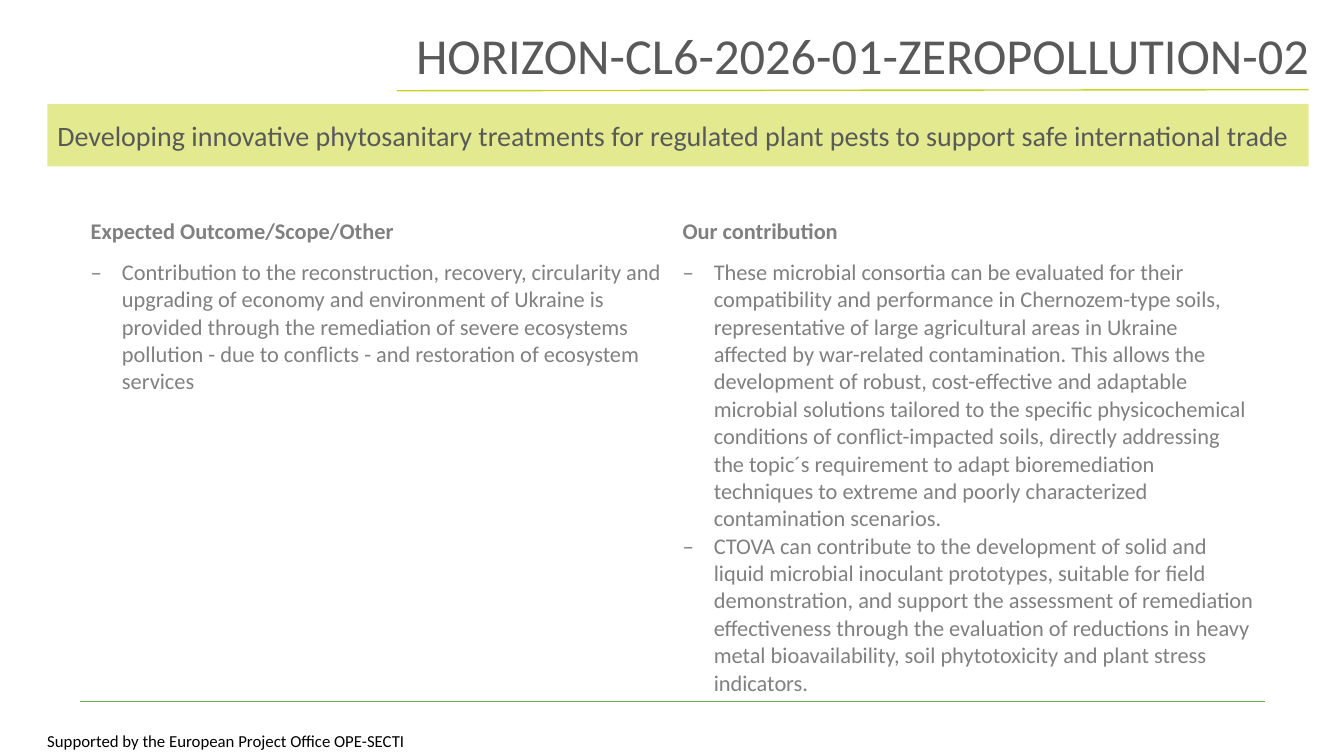
from dataclasses import dataclass

from lxml import etree
from pptx import Presentation
from pptx import util as u
from pptx.dml import color
from pptx.enum import shapes, text
from pptx.oxml import ns

COLORS = {
    "lime": "C7D41E",
    "green": "70AD47",
    "title": "595959",
    "body": "808080",
    "footer": "000000",
    "white": "FFFFFF",
}
FONT = "Calibri"
INDENT = u.Inches(0.31)
ROW_HEIGHTS = (0.41, 4.44)


@dataclass(frozen=True)
class Style:
    size: int
    color: str
    bold: bool = False


@dataclass(frozen=True)
class Column:
    heading: str
    points: tuple[str, ...]


TITLE = Style(36, "title")
TOPIC = Style(20, "title")
HEADING = Style(16, "body", True)
POINT = Style(16, "body")
FOOTER = Style(12, "footer")

COLUMNS = (
    Column(
        "Expected Outcome/Scope/Other",
        (
            "Contribution to the reconstruction, recovery, circularity and upgrading of "
            "economy and environment of Ukraine is provided through the remediation of "
            "severe ecosystems pollution - due to conflicts - and restoration of "
            "ecosystem services",
        ),
    ),
    Column(
        "Our contribution",
        (
            "These microbial consortia can be evaluated for their compatibility and "
            "performance in Chernozem-type soils, representative of large agricultural "
            "areas in Ukraine affected by war-related contamination. This allows the "
            "development of robust, cost-effective and adaptable microbial solutions "
            "tailored to the specific physicochemical conditions of conflict-impacted "
            "soils, directly addressing the topic´s requirement to adapt bioremediation "
            "techniques to extreme and poorly characterized contamination scenarios.",
            "CTOVA can contribute to the development of solid and liquid microbial "
            "inoculant prototypes, suitable for field demonstration, and support the "
            "assessment of remediation effectiveness through the evaluation of "
            "reductions in heavy metal bioavailability, soil phytotoxicity and plant "
            "stress indicators.",
        ),
    ),
)


def rgb(name: str) -> color.RGBColor:
    return color.RGBColor.from_string(COLORS[name])


def apply(obj, values: dict) -> None:
    for name, value in values.items():
        setattr(obj, name, value)


def box(left: float, top: float, width: float, height: float) -> dict:
    sides = {"left": left, "top": top, "width": width, "height": height}
    return {side: u.Inches(value) for side, value in sides.items()}


def write(p, words: str, style: Style, **layout) -> None:
    apply(p, layout)
    r = p.add_run()
    r.text = words
    apply(r.font, {"name": FONT, "size": u.Pt(style.size), "bold": style.bold})
    r.font.color.rgb = rgb(style.color)


def add_bullet(p) -> None:
    pPr = p._p.get_or_add_pPr()
    apply_indent = {"marL": INDENT, "indent": -INDENT}
    for name, value in apply_indent.items():
        pPr.set(name, str(int(value)))
    etree.SubElement(pPr, ns.qn("a:buFont"), typeface=FONT)
    etree.SubElement(pPr, ns.qn("a:buChar"), char="‒")


def fill_tint(fill, parent, name: str, opacity: int) -> None:
    fill.solid()
    fill.fore_color.rgb = rgb(name)
    clr = parent.find(ns.qn("a:solidFill")).find(ns.qn("a:srgbClr"))
    etree.SubElement(clr, ns.qn("a:alpha"), val=str(opacity * 1000))


def add_bottom_border(cell, name: str, width: float) -> None:
    tcPr = cell._tc.get_or_add_tcPr()
    border = etree.Element(ns.qn("a:lnB"), w=str(int(u.Pt(width))))
    solid = etree.SubElement(border, ns.qn("a:solidFill"))
    etree.SubElement(solid, ns.qn("a:srgbClr"), val=COLORS[name])
    tcPr.insert(0, border)


def add_title(s) -> None:
    sp = s.shapes.title
    apply(sp, box(3.84, 0.18, 9.25, 0.72))
    tf = sp.text_frame
    apply(tf, {
        "auto_size": text.MSO_AUTO_SIZE.NONE,
        "vertical_anchor": text.MSO_ANCHOR.BOTTOM,
        "word_wrap": True,
    })
    write(tf.paragraphs[0], "HORIZON-CL6-2026-01-ZEROPOLLUTION-02", TITLE,
          alignment=text.PP_ALIGN.RIGHT, line_spacing=0.9)


def add_title_rule(s) -> None:
    line = s.shapes.add_connector(
        shapes.MSO_CONNECTOR.STRAIGHT,
        u.Inches(3.94), u.Inches(0.9), u.Inches(12.98), u.Inches(0.89),
    )
    line.line.color.rgb = rgb("lime")
    line.line.width = u.Pt(1)
    etree.SubElement(line._element.spPr, ns.qn("a:effectLst"))


def add_topic(s) -> None:
    sp = s.shapes.add_shape(shapes.MSO_SHAPE.RECTANGLE, **box(0.47, 1.03, 12.51, 0.62))
    sp.shadow.inherit = False
    fill_tint(sp.fill, sp._element.spPr, "lime", 50)
    sp.line.fill.background()
    tf = sp.text_frame
    apply(tf, {"word_wrap": True, "vertical_anchor": text.MSO_ANCHOR.MIDDLE})
    write(tf.paragraphs[0],
          "Developing innovative phytosanitary treatments for regulated plant pests "
          "to support safe international trade",
          TOPIC, alignment=text.PP_ALIGN.LEFT)


def add_contributions(s) -> None:
    frame = s.shapes.add_table(
        len(ROW_HEIGHTS), len(COLUMNS), **box(0.8, 2.11, 11.74, sum(ROW_HEIGHTS))
    )
    table = frame.table
    apply(table, {"first_row": False, "horz_banding": False})
    for row, height in zip(table.rows, ROW_HEIGHTS):
        row.height = u.Inches(height)
    for i, column in enumerate(COLUMNS):
        head, body = table.cell(0, i), table.cell(1, i)
        head.fill.background()
        write(head.text_frame.paragraphs[0], column.heading, HEADING)
        fill_tint(body.fill, body._tc.get_or_add_tcPr(), "white", 20)
        add_bottom_border(body, "green", 1)
        tf = body.text_frame
        for n, point in enumerate(column.points):
            p = tf.add_paragraph() if n else tf.paragraphs[0]
            add_bullet(p)
            write(p, point, POINT)


def add_footer(s) -> None:
    tf = s.shapes.add_textbox(**box(0.37, 7.18, 3.88, 0.32)).text_frame
    tf.word_wrap = True
    write(tf.paragraphs[0], "Supported by the European Project Office OPE-SECTI",
          FOOTER, line_spacing=1.1)


def main() -> None:
    prs = Presentation()
    apply(prs, {"slide_width": u.Inches(13.33), "slide_height": u.Inches(7.5)})
    s = prs.slides.add_slide(prs.slide_layouts[5])
    for draw in (add_footer, add_title_rule, add_title, add_topic, add_contributions):
        draw(s)
    prs.save("out.pptx")


if __name__ == "__main__":
    main()
